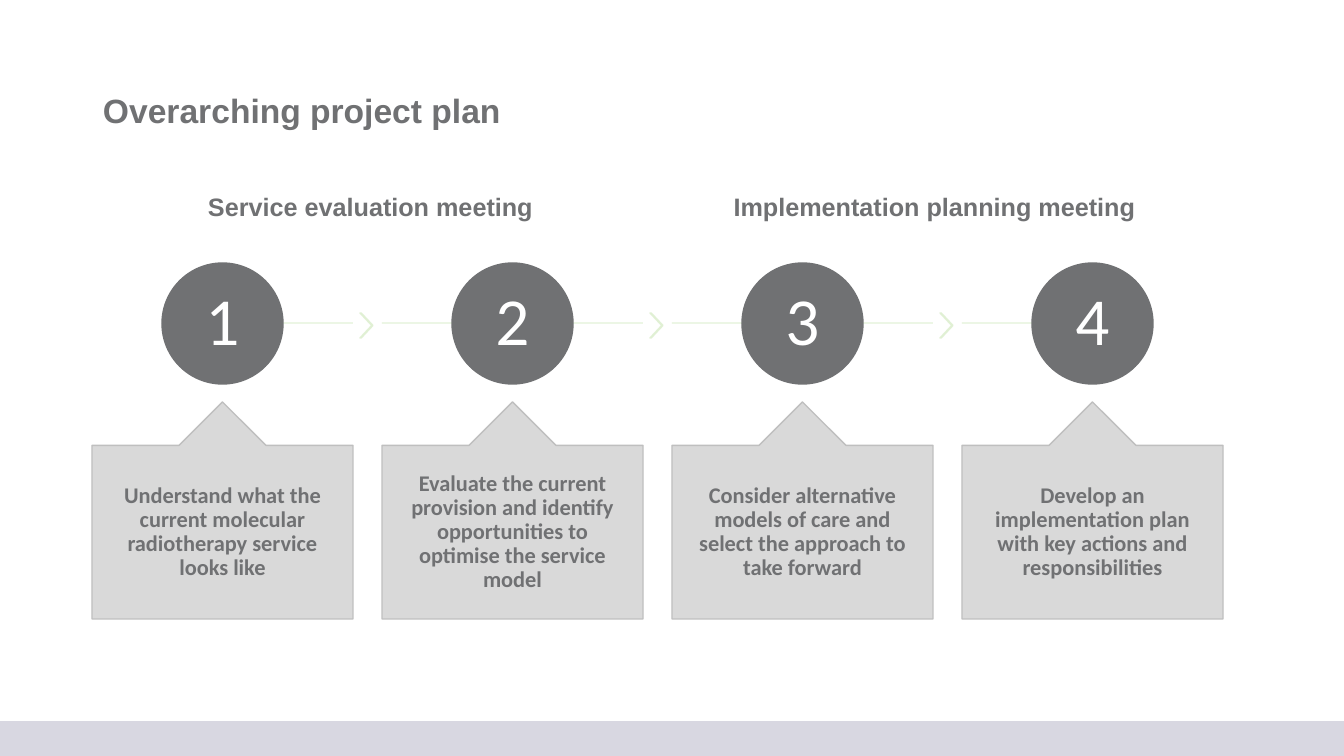
from lxml import etree
from pptx import Presentation
from pptx.dml.color import RGBColor
from pptx.enum.shapes import MSO_CONNECTOR, MSO_SHAPE
from pptx.enum.text import MSO_ANCHOR, PP_ALIGN
from pptx.oxml.ns import qn
from pptx.util import Pt

RECT = MSO_SHAPE.RECTANGLE
OVAL = MSO_SHAPE.OVAL
CHEVRON = MSO_SHAPE.CHEVRON
CALLOUT = MSO_SHAPE.UP_ARROW_CALLOUT
STRAIGHT = MSO_CONNECTOR.STRAIGHT
LEFT, CENTER = PP_ALIGN.LEFT, PP_ALIGN.CENTER
TOP, MIDDLE = MSO_ANCHOR.TOP, MSO_ANCHOR.MIDDLE

GREY, WHITE, GREEN = "707173", "FFFFFF", "E0F0D3"
BOX, EDGE, BAND = "D9D9D9", "BFBFBF", "D8D7E1"

# Step grid, in px
FIRST, PITCH, WIDTH = 92, 290, 261
DISC, DISC_TOP = 121, 263
AXIS = DISC_TOP + DISC // 2

STEPS = [
    "Understand what the current molecular radiotherapy service looks like",
    "Evaluate the current provision and identify opportunities to optimise the service model",
    "Consider alternative models of care and select the approach to take forward",
    "Develop an implementation plan with key actions and responsibilities",
]
MEETINGS = [(122, "Service evaluation meeting"),
            (686, "Implementation planning meeting")]


def px(n):
    return round(n * 914400 / 100.8)


def paint(fmt, color, alpha=None):
    """Set a solid fill, with an optional opacity in percent."""
    fmt.solid()
    fmt.fore_color.rgb = RGBColor.from_string(color)
    if alpha:
        for node in fmt._xPr.iter(qn("a:srgbClr")):
            etree.SubElement(node, qn("a:alpha"), val=str(alpha * 1000))


def write(shape, text, size, font="Arial", color=GREY, bold=True,
          align=CENTER, anchor=MIDDLE, inset=(10, 5), space=None):
    frame = shape.text_frame
    frame.word_wrap = True
    frame.vertical_anchor = anchor
    frame.margin_left = frame.margin_right = px(inset[0])
    frame.margin_top = frame.margin_bottom = px(inset[1])
    para = frame.paragraphs[0]
    para.alignment = align
    para.line_spacing = space
    run = para.add_run()
    run.text = text
    run.font.name = font
    run.font.size = Pt(size)
    run.font.bold = bold
    run.font.color.rgb = RGBColor.from_string(color)


def add_text(slide, x, y, w, h, text, **style):
    box = slide.shapes.add_textbox(px(x), px(y), px(w), px(h))
    write(box, text, **style)


def add_form(slide, kind, x, y, w, h, fill, edge, alpha=None, adjust=()):
    form = slide.shapes.add_shape(kind, px(x), px(y), px(w), px(h))
    form.shadow.inherit = False
    paint(form.fill, fill, alpha)
    paint(form.line.fill, edge, alpha)
    form.line.width = Pt(1)
    for i, value in enumerate(adjust):
        form.adjustments[i] = value
    return form


def add_line(slide, x1, x2, y):
    line = slide.shapes.add_connector(STRAIGHT, px(x1), px(y), px(x2), px(y))
    line.line.width = Pt(1)
    paint(line.line.fill, GREEN, 90)
    etree.SubElement(line._element.spPr, qn("a:effectLst"))


def add_step(slide, i, text):
    last = len(STEPS) - 1
    left = FIRST + i * PITCH
    right, mid = left + WIDTH, left + WIDTH // 2

    # Track behind the disc, open at both outer ends
    add_line(slide, left if i else mid, right if i < last else mid, AXIS)
    if i < last:
        add_form(slide, CHEVRON, right + 7, 313, 13, 25, GREEN, GREEN,
                 alpha=90, adjust=[0.9])

    # Numbered disc
    disc = add_form(slide, OVAL, mid - DISC // 2, DISC_TOP, DISC, DISC,
                    GREY, GREY)
    write(disc, str(i + 1), size=48, font="Calibri", color=WHITE, bold=False,
          inset=(5, 5), space=0.9)

    # Callout
    box = add_form(slide, CALLOUT, left, 402, WIDTH, 217, BOX, EDGE,
                   adjust=[0.5, 0.2, 0.2, 1])
    write(box, text, size=16, font="Calibri", inset=(20, 18), space=0.9)


def main():
    deck = Presentation()
    deck.slide_width, deck.slide_height = px(1344), px(756)
    slide = deck.slides.add_slide(deck.slide_layouts[6])

    # Footer band and title
    add_form(slide, RECT, 0, 722, 1344, 34, BAND, BAND)
    add_text(slide, 93, 40, 1159, 146, "Overarching project plan", size=24,
             align=LEFT, space=0.9)

    # Process steps
    for i, text in enumerate(STEPS):
        add_step(slide, i, text)

    # Meeting headings
    for x, text in MEETINGS:
        add_text(slide, x, 186, 497, 40, text, size=18, anchor=TOP)

    deck.save("out.pptx")


if __name__ == "__main__":
    main()
